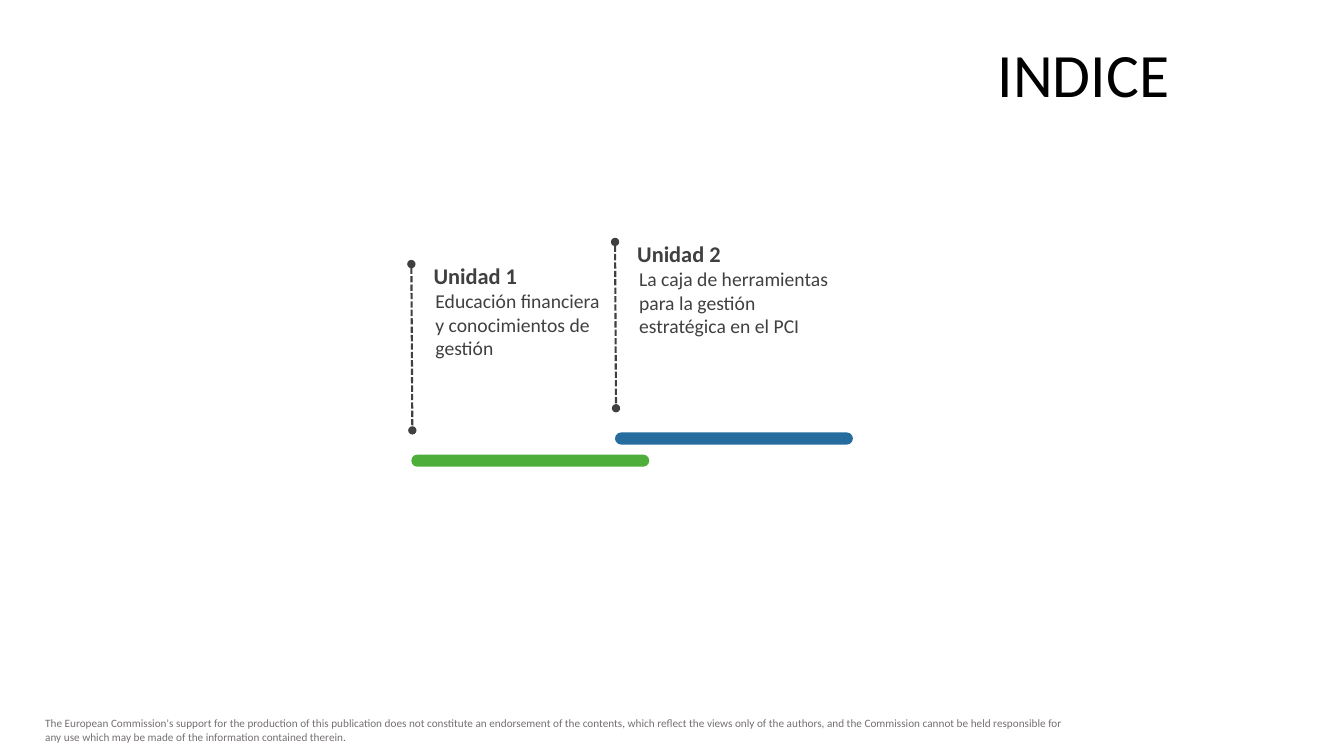
"""Builds the index slide with two stepped units."""
from lxml import etree
from pptx import Presentation
from pptx.dml.color import RGBColor
from pptx.enum.dml import MSO_LINE
from pptx.enum.shapes import MSO_CONNECTOR, MSO_SHAPE
from pptx.enum.text import MSO_ANCHOR, PP_ALIGN
from pptx.oxml.ns import qn
from pptx.util import Inches, Pt

DASH = MSO_LINE.SQUARE_DOT
STRAIGHT = MSO_CONNECTOR.STRAIGHT
ROUNDED = MSO_SHAPE.ROUNDED_RECTANGLE
MIDDLE, TOP = MSO_ANCHOR.MIDDLE, MSO_ANCHOR.TOP
LEFT, RIGHT = PP_ALIGN.LEFT, PP_ALIGN.RIGHT

WIDTH, HEIGHT = 13.33, 7.5
FONT, DARK = "Calibri", "404040"
TITLE = "INDICE"
DISCLAIMER = (
    "The European Commission's support for the production of this publication "
    "does not constitute an endorsement of the contents, which reflect the views "
    "only of the authors, and the Commission cannot be held responsible for any "
    "use which may be made of the information contained therein."
)
UNITS = [
    ("Unidad 1", "Educación financiera y conocimientos de gestión", "4EAE3A", 1.89),
    ("Unidad 2", "La caja de herramientas para la gestión estratégica en el PCI",
     "266C9F", 2.22),
]
FIRST_LEFT, FIRST_TOP = 4.08, 2.62
STEP_RIGHT, STEP_UP = 2.02, 0.22
BAR_WIDTH, BAR_HEIGHT, BAR_DROP = 2.36, 0.12, 1.89
MARKER_LENGTH, MARKER_LEAN = 1.65, 0.01


def color(value):
    return RGBColor.from_string(value)


def write(shape, text, size, font_color, bold=False, align=LEFT, anchor=TOP, inset=0.1):
    frame = shape.text_frame
    frame.word_wrap = True
    frame.vertical_anchor = anchor
    frame.margin_left = frame.margin_right = Inches(inset)
    frame.margin_top = frame.margin_bottom = Inches(0.05)
    frame.text = text
    paragraph = frame.paragraphs[0]
    paragraph.alignment = align
    font = paragraph.runs[0].font
    font.name, font.size, font.bold = FONT, Pt(size), bold
    font.color.rgb = color(font_color)


def add_text(slide, box, *args, **options):
    shape = slide.shapes.add_textbox(*map(Inches, box))
    write(shape, *args, **options)


def add_bar(slide, left, top, fill):
    bar = slide.shapes.add_shape(
        ROUNDED, *map(Inches, (left, top, BAR_WIDTH, BAR_HEIGHT)))
    bar.adjustments[0] = 0.5
    bar.shadow.inherit = False
    bar.fill.solid()
    bar.fill.fore_color.rgb = color(fill)
    bar.line.fill.background()


def add_marker(slide, left, top):
    ends = (left, top, left + MARKER_LEAN, top + MARKER_LENGTH)
    marker = slide.shapes.add_connector(STRAIGHT, *map(Inches, ends))
    marker.line.color.rgb = color(DARK)
    marker.line.width = Pt(1.5)
    marker.line.dash_style = DASH
    outline = marker.line._get_or_add_ln()
    for end in ("a:headEnd", "a:tailEnd"):
        etree.SubElement(outline, qn(end), type="oval")
    etree.SubElement(marker._element.spPr, qn("a:effectLst"))


def add_unit(slide, index, heading, topic, fill, topic_width):
    left = FIRST_LEFT + index * STEP_RIGHT
    top = FIRST_TOP - index * STEP_UP
    add_bar(slide, left, top + BAR_DROP, fill)
    add_text(slide, (left + 0.14, top + 0.2, topic_width, 0.81), topic, 14, DARK)
    add_text(slide, (left + 0.1, top - 0.07, topic_width, 0.37), heading, 16, DARK,
             bold=True, inset=0.12)
    add_marker(slide, left, top)


def main():
    presentation = Presentation()
    presentation.slide_width, presentation.slide_height = Inches(WIDTH), Inches(HEIGHT)
    slide = presentation.slides.add_slide(presentation.slide_layouts[5])
    title = slide.shapes.title
    title.left, title.top, title.width, title.height = map(
        Inches, (3.09, 0.37, 8.61, 0.79))
    write(title, TITLE, 44, "000000", align=RIGHT, anchor=MIDDLE)
    title.text_frame.paragraphs[0].line_spacing = 0.9
    add_text(slide, (0.35, 7.06, 10.46, 0.37), DISCLAIMER, 8, "767171")
    for index, unit in enumerate(UNITS):
        add_unit(slide, index, *unit)
    presentation.save("out.pptx")


if __name__ == "__main__":
    main()
